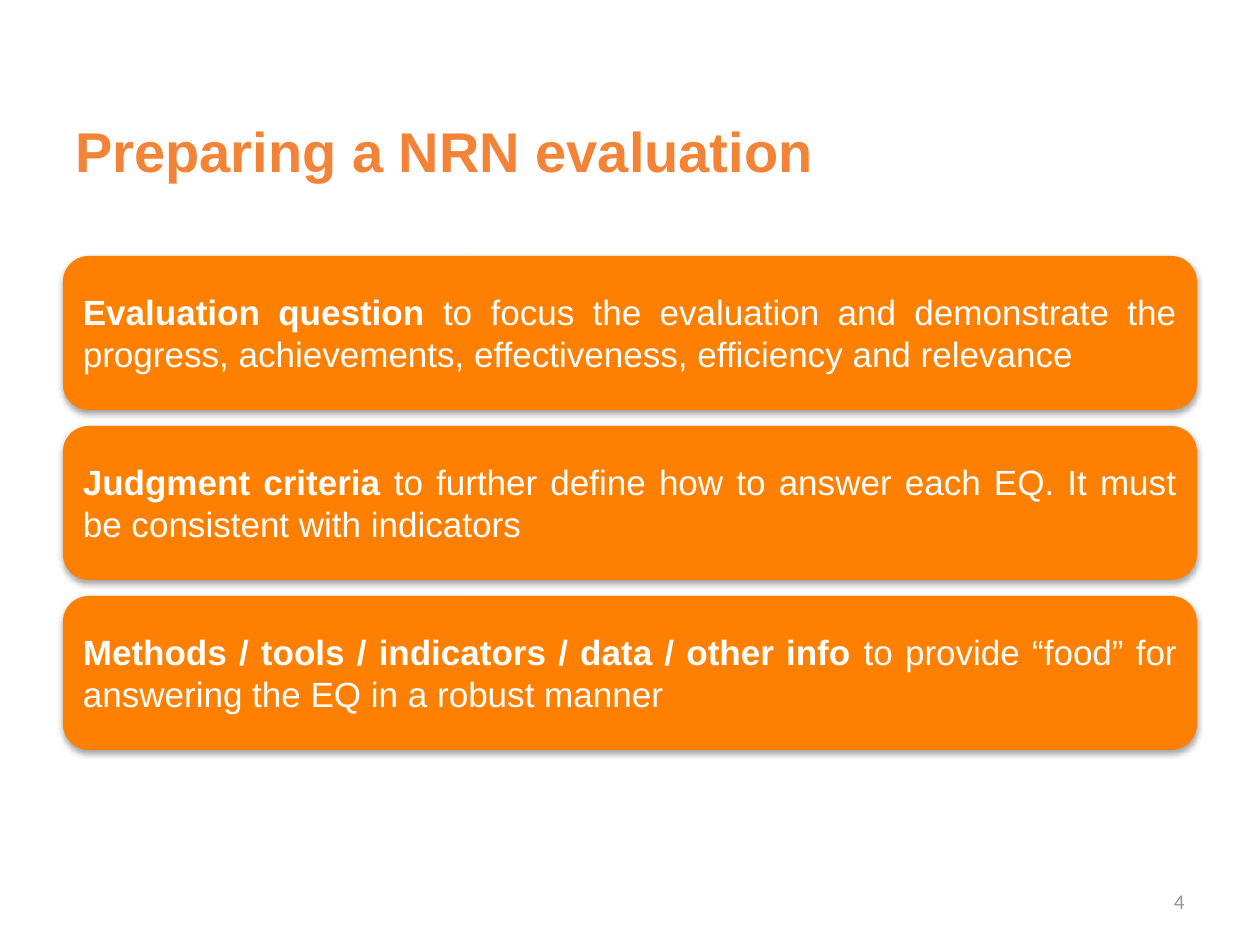
from dataclasses import dataclass

from lxml import etree
from pptx import Presentation
from pptx.dml.color import RGBColor
from pptx.enum.shapes import MSO_SHAPE
from pptx.enum.text import MSO_ANCHOR, PP_ALIGN
from pptx.oxml.ns import qn
from pptx.util import Pt

ROUNDED = MSO_SHAPE.ROUNDED_RECTANGLE
MIDDLE = MSO_ANCHOR.MIDDLE
LEFT, RIGHT, JUSTIFY = PP_ALIGN.LEFT, PP_ALIGN.RIGHT, PP_ALIGN.JUSTIFY
PX = 914400 / 126


@dataclass(frozen=True)
class Theme:
    title: RGBColor = RGBColor(0xF3, 0x83, 0x37)
    card: RGBColor = RGBColor(0xFF, 0x80, 0x00)
    card_text: RGBColor = RGBColor(0xFF, 0xFF, 0xFF)
    number: RGBColor = RGBColor(0x96, 0x96, 0x96)
    shadow: str = "000000"
    font: str = "Arial"
    number_font: str = "Calibri"
    title_size: int = 32
    card_size: int = 20
    number_size: int = 12


THEME = Theme()

CARDS = [
    ("Evaluation question ",
     "to focus the evaluation and demonstrate the progress, achievements, "
     "effectiveness, efficiency and relevance"),
    ("Judgment criteria ",
     "to further define how to answer each EQ. It must be consistent with indicators"),
    ("Methods / tools / indicators / data / other info ",
     "to provide “food” for answering the EQ in a robust manner"),
]


def emu(box):
    return [round(length * PX) for length in box]


def style(para, font, size, color, align):
    para.alignment = align
    para.font.name = font
    para.font.size = Pt(size)
    para.font.color.rgb = color


def add_label(page, box, text, font, size, color, align, bold=False):
    frame = page.shapes.add_textbox(*emu(box)).text_frame
    frame.word_wrap = True
    frame.vertical_anchor = MIDDLE
    para = frame.paragraphs[0]
    para.text = text
    style(para, font, size, color, align)
    para.font.bold = bold


def add_soft_shadow(shape):
    """Give the shape a blurred shadow that falls straight down."""
    shape.shadow.inherit = False
    effects = shape._element.spPr.find(qn("a:effectLst"))
    shadow = etree.SubElement(
        effects, qn("a:outerShdw"), blurRad=str(Pt(3.1)), dist=str(Pt(1.8)),
        dir="5400000", rotWithShape="0")
    color = etree.SubElement(shadow, qn("a:srgbClr"), val=THEME.shadow)
    etree.SubElement(color, qn("a:alpha"), val="35000")


def add_card(page, box, term, purpose):
    card = page.shapes.add_shape(ROUNDED, *emu(box))
    card.fill.solid()
    card.fill.fore_color.rgb = THEME.card
    card.line.fill.background()
    add_soft_shadow(card)
    frame = card.text_frame
    frame.word_wrap = True
    frame.vertical_anchor = MIDDLE
    para = frame.paragraphs[0]
    style(para, THEME.font, THEME.card_size, THEME.card_text, JUSTIFY)
    for text, bold in ((term, True), (purpose, False)):
        span = para.add_run()
        span.text = text
        span.font.bold = bold


def add_card_stack(page, box, cards, gap):
    """Share the height of the box equally among the cards."""
    left, top, width, height = box
    card_height = (height - gap * (len(cards) - 1)) // len(cards)
    for index, (term, purpose) in enumerate(cards):
        card_top = top + index * (card_height + gap)
        add_card(page, (left, card_top, width, card_height), term, purpose)


def main():
    deck = Presentation()
    deck.slide_width, deck.slide_height = emu((1260, 945))
    page = deck.slides.add_slide(deck.slide_layouts[6])
    add_label(page, (63, 71, 1134, 158), "Preparing a NRN evaluation",
              THEME.font, THEME.title_size, THEME.title, LEFT, bold=True)
    add_label(page, (903, 876, 294, 50), "4",
              THEME.number_font, THEME.number_size, THEME.number, RIGHT)
    add_card_stack(page, (63, 256, 1134, 494), CARDS, gap=16)
    deck.save("out.pptx")


if __name__ == "__main__":
    main()
